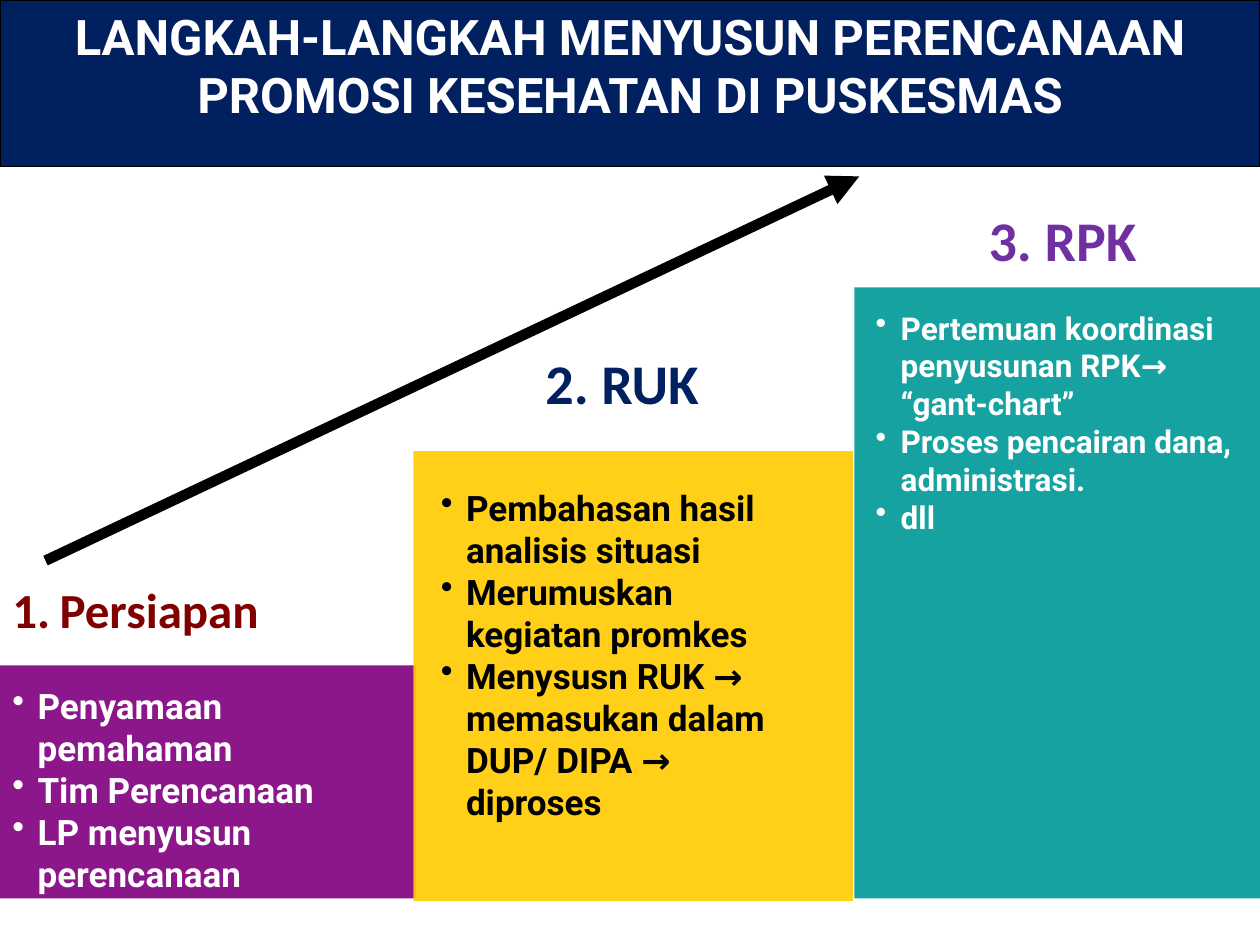
import pptx
import pptx.util
import pptx.dml.color
import pptx.enum.shapes
import pptx.enum.text
import pptx.oxml.ns
import lxml.etree

Pt = pptx.util.Pt
qn = pptx.oxml.ns.qn
RECTANGLE = pptx.enum.shapes.MSO_SHAPE.RECTANGLE
LEFT = pptx.enum.text.PP_ALIGN.LEFT
CENTER = pptx.enum.text.PP_ALIGN.CENTER


def color(value):
    return pptx.dml.color.RGBColor.from_string(value)


def add_text(box, lines, font, font_color, align=LEFT, indent=0, bullet=None):
    """Add a text box with one paragraph per line; bullet is a (tag, attributes) pair."""
    text_frame = slide.shapes.add_textbox(*map(Pt, box)).text_frame
    text_frame.word_wrap = True
    for number, line in enumerate(lines):
        paragraph = text_frame.paragraphs[0] if number == 0 else text_frame.add_paragraph()
        paragraph.text = line
        paragraph.alignment = align
        if indent:
            properties = paragraph._p.get_or_add_pPr()
            properties.set("marL", str(Pt(indent)))
            properties.set("indent", str(-Pt(indent)))
            if bullet:
                tag, attributes = bullet
                lxml.etree.SubElement(properties, qn(tag), attributes)
        for name, value in font.items():
            setattr(paragraph.font, name, value)
        paragraph.font.color.rgb = color(font_color)


presentation = pptx.Presentation()
presentation.slide_width = Pt(720)
presentation.slide_height = Pt(540)
slide = presentation.slides.add_slide(presentation.slide_layouts[6])

DOT = ("a:buChar", {"char": "•"})
NUMBER = ("a:buAutoNum", {"type": "arabicPeriod"})

steps = [
    {
        "block": (0, 380.2, 237.6, 133.2), "fill": "800080",
        "heading": "Persiapan", "heading_box": (0, 327.6, 206.6, 41),
        "heading_size": 28, "heading_color": "800000",
        "heading_align": LEFT, "heading_bullet": NUMBER,
        "items": ["Penyamaan pemahaman", "Tim Perencanaan", "LP menyusun perencanaan"],
        "items_box": (0, 387.4, 226.8, 128.2), "items_size": 20, "items_color": "FFFFFF",
    },
    {
        "block": (236.2, 257.8, 251.3, 257), "fill": "FFCC00",
        "heading": "2. RUK", "heading_box": (304.6, 195.8, 198.7, 88.6),
        "heading_size": 32, "heading_color": "002060",
        "heading_align": LEFT, "heading_bullet": None,
        "items": [
            "Pembahasan hasil analisis situasi",
            "Merumuskan kegiatan promkes",
            "Menysusn RUK → memasukan dalam DUP/ DIPA → diproses",
        ],
        "items_box": (244.8, 274.3, 226.8, 200.9), "items_size": 20, "items_color": "000000",
    },
    {
        "block": (488.2, 164.2, 231.8, 349.2), "fill": "009999",
        "heading": "3. RPK", "heading_box": (494.6, 113.8, 225.4, 45.4),
        "heading_size": 32, "heading_color": "7030A0",
        "heading_align": CENTER, "heading_bullet": None,
        "items": [
            "Pertemuan koordinasi penyusunan RPK→ “gant-chart”",
            "Proses pencairan dana, administrasi.",
            "dll",
        ],
        "items_box": (493.2, 172.8, 226.8, 269.3), "items_size": 18, "items_color": "FFFFFF",
    },
]

# Stair blocks, slightly transparent, with heading and list
for step in steps:
    block = slide.shapes.add_shape(RECTANGLE, *map(Pt, step["block"]))
    block.shadow.inherit = False
    block.fill.solid()
    block.fill.fore_color.rgb = color(step["fill"])
    block.line.fill.background()
    fill_color = block._element.spPr.find(qn("a:solidFill"))[0]
    lxml.etree.SubElement(fill_color, qn("a:alpha"), {"val": "91000"})

    heading_font = {"name": "Calibri", "size": Pt(step["heading_size"]), "bold": True}
    add_text(step["heading_box"], [step["heading"]], heading_font, step["heading_color"],
             step["heading_align"], 27, step["heading_bullet"])
    items_font = {"name": "Roboto", "size": Pt(step["items_size"]), "bold": True}
    add_text(step["items_box"], step["items"], items_font, step["items_color"],
             indent=14.4, bullet=DOT)

# Title band
band = slide.shapes.add_shape(RECTANGLE, 0, 0, Pt(720), Pt(95))
band.shadow.inherit = False
band.fill.solid()
band.fill.fore_color.rgb = color("002060")
band.line.color.rgb = color("000000")
band.line.width = Pt(0.75)
add_text((0, 0, 720, 75), ["LANGKAH-LANGKAH MENYUSUN PERENCANAAN PROMOSI KESEHATAN DI PUSKESMAS"],
         {"name": "Roboto", "size": Pt(28), "bold": True}, "FFFFFF", CENTER)

# Rising arrow
arrow = slide.shapes.add_connector(
    pptx.enum.shapes.MSO_CONNECTOR.STRAIGHT, Pt(26), Pt(320.4), Pt(491), Pt(100.8))
arrow.line.color.rgb = color("000000")
arrow.line.width = Pt(6)
lxml.etree.SubElement(arrow.line._get_or_add_ln(), qn("a:tailEnd"), {"type": "triangle"})
lxml.etree.SubElement(arrow._element.spPr, qn("a:effectLst"))

presentation.save("out.pptx")
